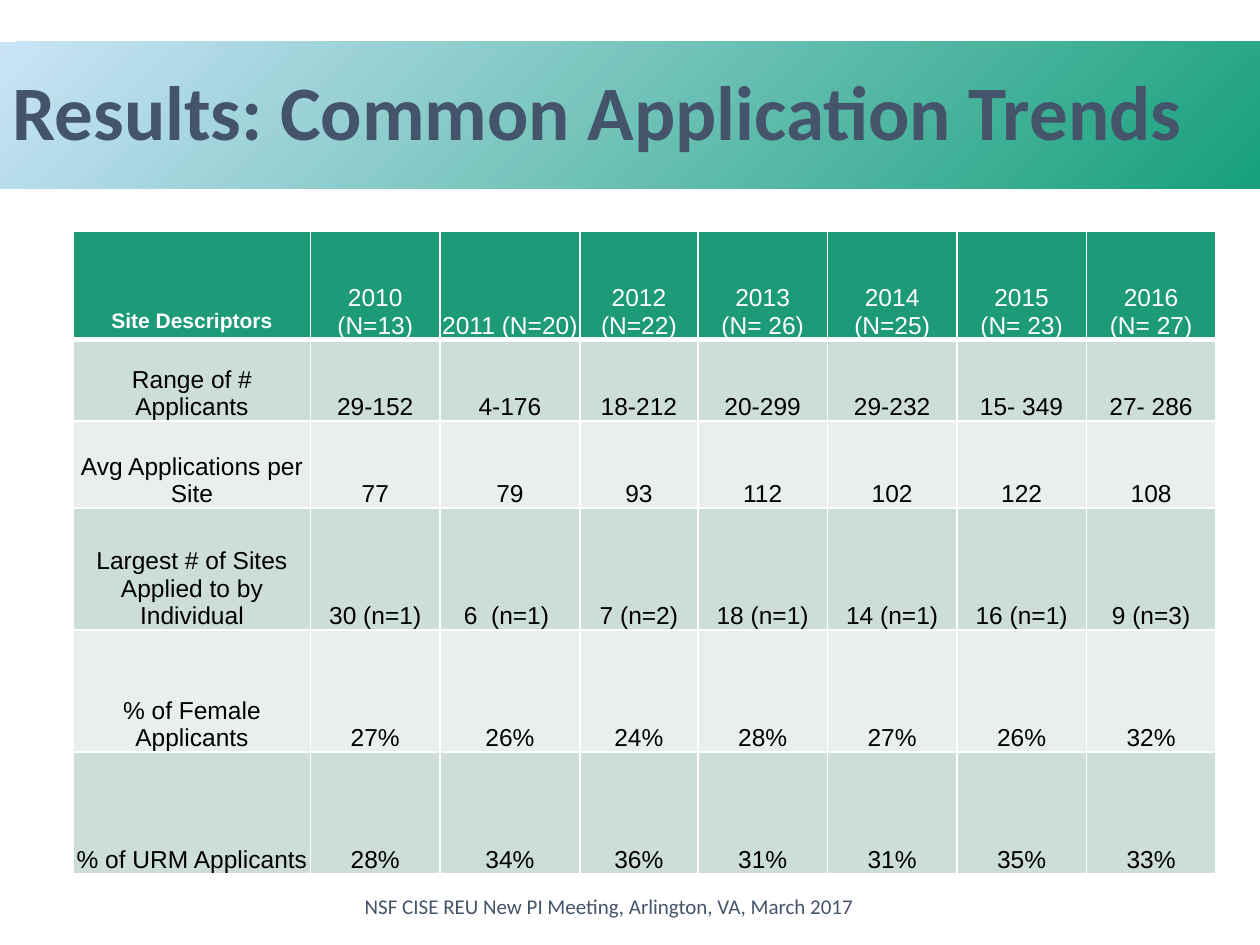
from dataclasses import dataclass

from lxml import etree
from pptx import Presentation
from pptx.dml.color import RGBColor
from pptx.enum.text import MSO_ANCHOR, MSO_AUTO_SIZE, PP_ALIGN
from pptx.oxml.ns import qn
from pptx.util import Cm, Pt

LEFT, CENTER = PP_ALIGN.LEFT, PP_ALIGN.CENTER
MIDDLE, BOTTOM = MSO_ANCHOR.MIDDLE, MSO_ANCHOR.BOTTOM
NO_AUTOFIT = MSO_AUTO_SIZE.NONE

TITLE = "Results: Common Application Trends"
FOOTER = "NSF CISE REU New PI Meeting, Arlington, VA, March 2017"
COLUMN_WIDTHS = [4.78, 2.61, 2.82, 2.38] + [2.61] * 4
ROW_HEIGHTS = [2.18, 1.65, 1.75] + [2.46] * 3
TRENDS = [
    ["Site Descriptors", "2010 (N=13)", "2011 (N=20)", "2012 (N=22)",
     "2013\n(N= 26)", "2014\n(N=25)", "2015\n(N= 23)", "2016\n(N= 27)"],
    ["Range of # Applicants", "29-152", "4-176", "18-212",
     "20-299", "29-232", "15- 349", "27- 286"],
    ["Avg Applications per Site", "77", "79", "93", "112", "102", "122", "108"],
    ["Largest # of Sites Applied to by Individual", "30 (n=1)", "6  (n=1) ",
     "7 (n=2)", "18 (n=1)", "14 (n=1)", "16 (n=1)", "9 (n=3)"],
    ["% of Female Applicants", "27%", "26%", "24%", "28%", "27%", "26%", "32%"],
    ["% of URM Applicants", "28%", "34%", "36%", "31%", "31%", "35%", "33%"],
]


@dataclass(frozen=True)
class Theme:
    heading_font: str = "Calibri"
    table_font: str = "Arial"
    title_size: int = 44
    cell_size: int = 14
    small_size: int = 12
    slate: str = "44546A"
    white: str = "FFFFFF"
    black: str = "000000"
    header: str = "1D9A78"
    bands: tuple = ("CDDED6", "E8EFEC")
    gradient: tuple = ("CAE4F6", "17A07B")


class SlideBuilder:
    def __init__(self, slide, theme):
        self.slide = slide
        self.theme = theme

    def format_text(self, frame, font, size, color, bold=False, align=CENTER):
        for para in frame.paragraphs:
            para.alignment = align
            for span in para.runs:
                span.font.name = font
                span.font.size = Pt(size)
                span.font.bold = bold
                span.font.color.rgb = RGBColor.from_string(color)

    def title(self, text, left, top, width, height):
        box = self.slide.shapes.title
        box.left, box.top, box.width, box.height = map(Cm, (left, top, width, height))
        box.fill.gradient()
        box.fill.gradient_angle = 315
        for stop, color in zip(box.fill.gradient_stops, self.theme.gradient):
            stop.color.rgb = RGBColor.from_string(color)
        frame = box.text_frame
        frame.text = text
        frame.auto_size = NO_AUTOFIT
        frame.vertical_anchor = MIDDLE
        frame.paragraphs[0].line_spacing = 0.9
        self.format_text(frame, self.theme.heading_font, self.theme.title_size,
                         self.theme.slate, True, LEFT)

    def border(self, cell, side, width):
        properties = cell._tc.get_or_add_tcPr()
        line = etree.SubElement(properties, qn(f"a:ln{side}"), w=str(Pt(width)))
        fill = etree.SubElement(line, qn("a:solidFill"))
        etree.SubElement(fill, qn("a:srgbClr"), val=self.theme.white)

    def cell(self, cell, text, row, column):
        theme = self.theme
        is_header = row == 0
        is_corner = is_header and column == 0
        cell.text = text
        cell.vertical_anchor = BOTTOM
        if not is_corner:
            cell.margin_left = cell.margin_right = 0
            cell.margin_top = cell.margin_bottom = 0
        for side in "LRTB":
            is_rule = (row, side) in ((0, "B"), (1, "T"))
            self.border(cell, side, 3 if is_rule else 1)
        cell.fill.solid()
        fill = theme.header if is_header else theme.bands[(row - 1) % 2]
        cell.fill.fore_color.rgb = RGBColor.from_string(fill)
        self.format_text(cell.text_frame, theme.table_font,
                         theme.small_size if is_corner else theme.cell_size,
                         theme.white if is_header else theme.black, is_corner)

    def table(self, rows, left, top, widths, heights):
        table = self.slide.shapes.add_table(
            len(rows), len(widths), Cm(left), Cm(top),
            Cm(sum(widths)), Cm(sum(heights))).table
        for column, width in zip(table.columns, widths):
            column.width = Cm(width)
        for row, height in zip(table.rows, heights):
            row.height = Cm(height)
        for row, texts in enumerate(rows):
            for column, text in enumerate(texts):
                self.cell(table.cell(row, column), text, row, column)

    def text(self, text, left, top, width, height):
        box = self.slide.shapes.add_textbox(*map(Cm, (left, top, width, height)))
        frame = box.text_frame
        frame.text = text
        frame.word_wrap = True
        frame.vertical_anchor = MIDDLE
        self.format_text(frame, self.theme.heading_font, self.theme.small_size,
                         self.theme.slate)


def main():
    deck = Presentation()
    deck.slide_width, deck.slide_height = Cm(25.4), Cm(19.05)
    title_only = deck.slide_layouts[5]
    page = SlideBuilder(deck.slides.add_slide(title_only), Theme())
    page.title(TITLE, 0, 0.84, 25.4, 2.97)
    page.table(TRENDS, 1.48, 4.66, COLUMN_WIDTHS, ROW_HEIGHTS)
    page.text(FOOTER, 4.88, 17.78, 14.8, 0.97)
    deck.save("out.pptx")


if __name__ == "__main__":
    main()
